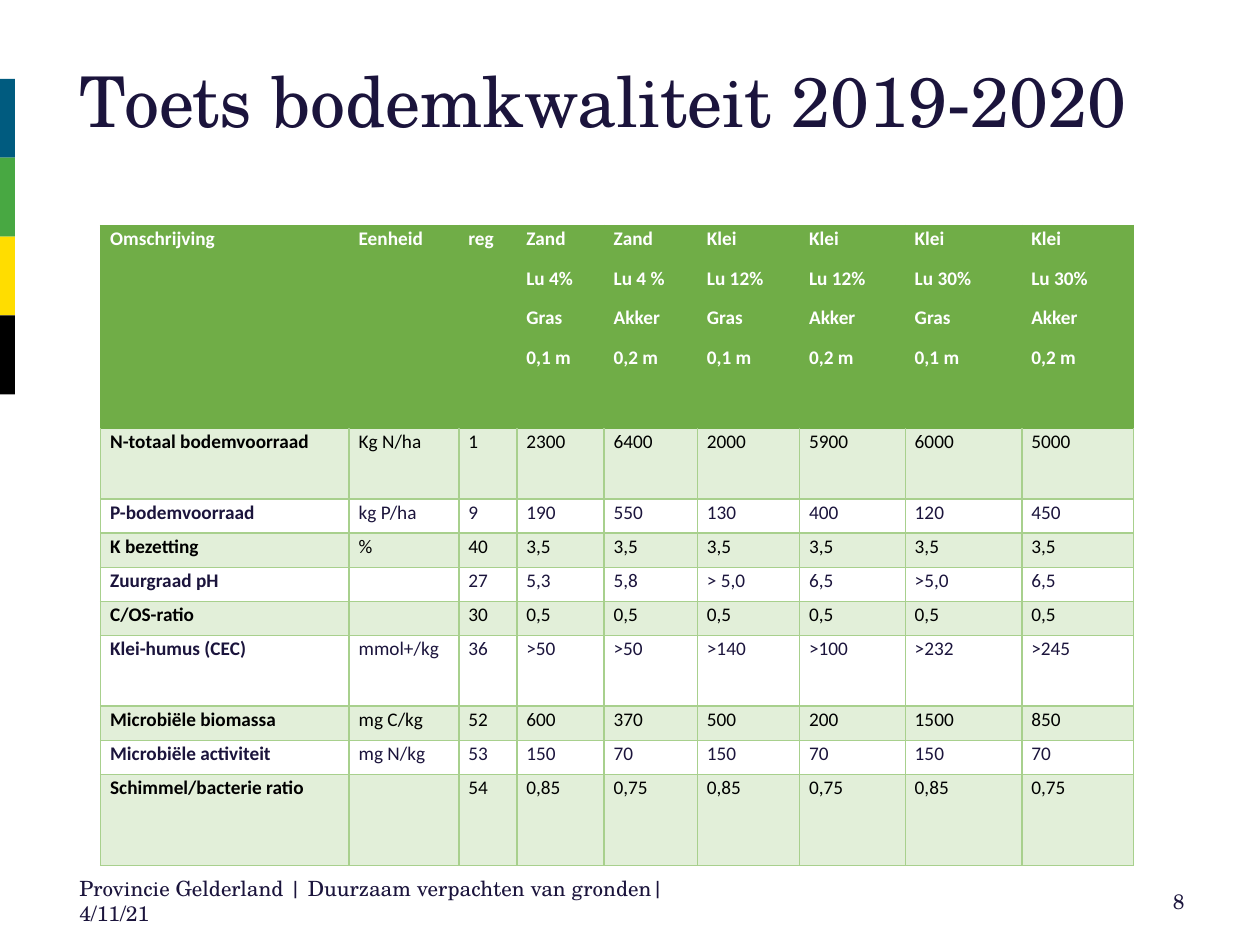
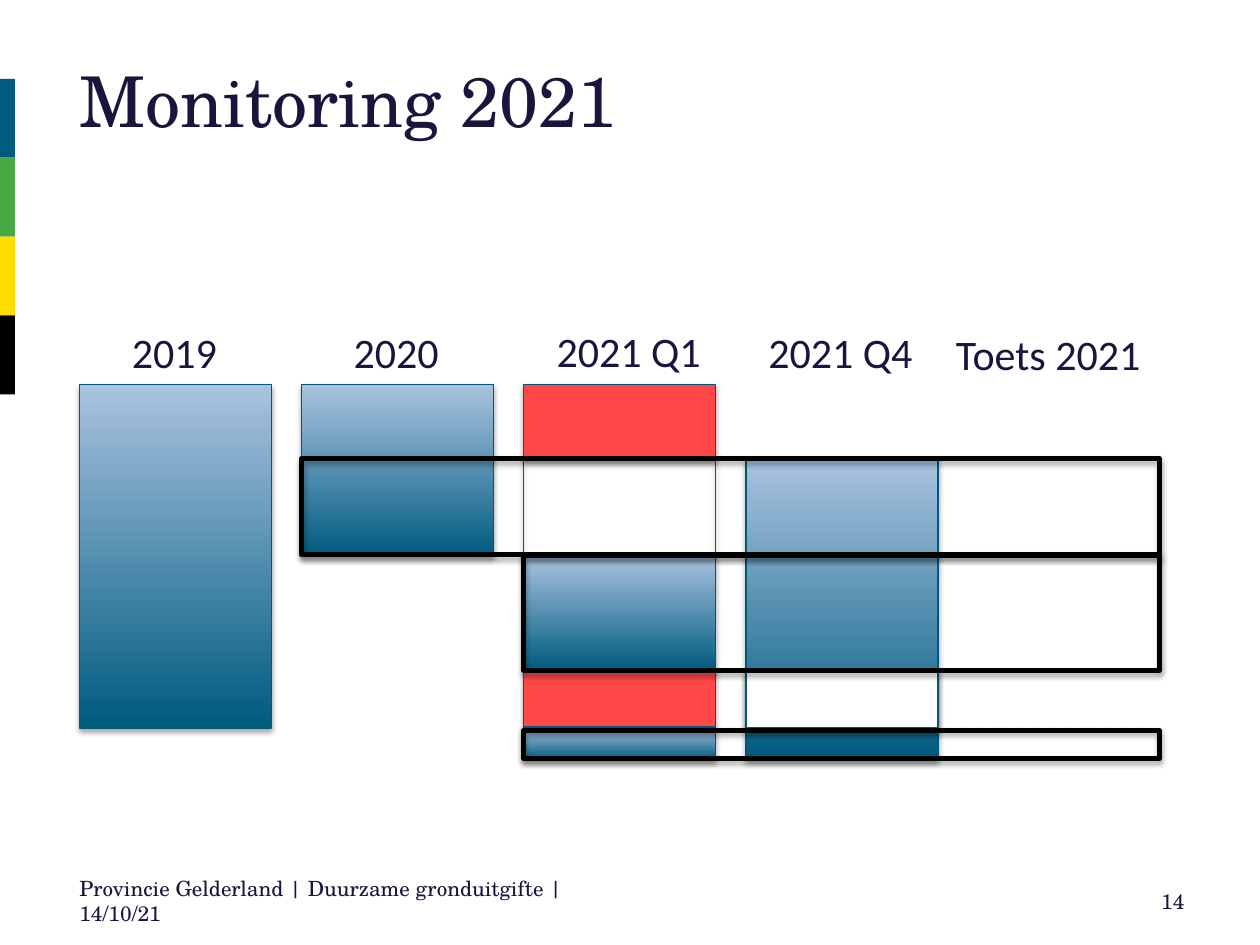
from dataclasses import dataclass

import lxml.etree
import pptx
import pptx.dml.color
import pptx.enum.shapes
import pptx.enum.text
import pptx.oxml.ns
import pptx.util

Cm = pptx.util.Cm
Pt = pptx.util.Pt
Align = pptx.enum.text.PP_ALIGN
Anchor = pptx.enum.text.MSO_ANCHOR


@dataclass(frozen=True)
class Theme:
    ink: str = "1B143C"
    black: str = "000000"
    white: str = "FFFFFF"
    bands: tuple = ("005B7F", "48A842", "FFDD00", "000000")
    header: str = "70AD47"
    stripe: str = "E2EFD9"
    grid: str = "A8D08D"
    bar_dark: str = "005B7F"
    bar_light: str = "A9C3E0"
    bar_line: str = "00597C"
    red: str = "FF4747"
    serif: str = "TeX Gyre Schola"
    sans: str = "Calibri"
    title_size: int = 40
    label_size: int = 24
    footer_size: int = 12
    table_size: int = 11


THEME = Theme()

SOIL = {
    "title": "Toets bodemkwaliteit 2019-2020",
    "footer": "Provincie Gelderland | Duurzaam verpachten van gronden| 4/11/21",
    "footer_width": 12.0,
    "number": "8",
}
MONITORING = {
    "title": "Monitoring 2021",
    "footer": "Provincie Gelderland | Duurzame gronduitgifte | 14/10/21",
    "footer_width": 9.83,
    "number": "14",
}

SOIL_ROWS = [
    ["Omschrijving", "Eenheid", "reg",
     "Zand\nLu 4%\nGras\n0,1 m", "Zand\nLu 4 %\nAkker\n0,2 m",
     "Klei\nLu 12%\nGras\n0,1 m", "Klei\nLu 12%\nAkker\n0,2 m",
     "Klei\nLu 30%\nGras\n0,1 m", "Klei\nLu 30%\nAkker\n0,2 m"],
    ["N-totaal bodemvoorraad", "Kg N/ha", "1", "2300", "6400", "2000", "5900", "6000", "5000"],
    ["P-bodemvoorraad", "kg P/ha", "9", "190", "550", "130", "400", "120", "450"],
    ["K bezetting", "%", "40", "3,5", "3,5", "3,5", "3,5", "3,5", "3,5"],
    ["Zuurgraad pH", "", "27", "5,3", "5,8", "> 5,0", "6,5", ">5,0", "6,5"],
    ["C/OS-ratio", "", "30", "0,5", "0,5", "0,5", "0,5", "0,5", "0,5"],
    ["Klei-humus (CEC)", "mmol+/kg", "36", ">50", ">50", ">140", ">100", ">232", ">245"],
    ["Microbiële biomassa", "mg C/kg", "52", "600", "370", "500", "200", "1500", "850"],
    ["Microbiële activiteit", "mg N/kg", "53", "150", "70", "150", "70", "150", "70"],
    ["Schimmel/bacterie ratio", "", "54", "0,85", "0,75", "0,85", "0,75", "0,85", "0,75"],
]
COLUMN_WIDTHS = [5.01, 2.21, 1.17, 1.76, 1.88, 2.06, 2.13, 2.35, 2.25]
ROW_HEIGHTS = [4.09, 1.42, 0.69, 0.69, 0.69, 0.69, 1.42, 0.69, 0.69, 1.83]

PERIOD_LABELS = [
    ("2019", 2.41, 6.45, 2.24),
    ("2020", 6.88, 6.45, 2.24),
    ("2021 Q1", 10.97, 6.43, 3.43),
    ("2021 Q4", 15.24, 6.45, 3.43),
    ("Toets 2021", 19.02, 6.5, 4.27),
]
BAR_LEFT, BAR_PITCH, BAR_WIDTH = 1.6, 4.48, 3.87
PERIOD_BARS = [
    (0, 7.75, 14.68, "gradient"),
    (1, 7.75, 11.22, "gradient"),
    (2, 9.25, 11.2, None),
    (2, 11.2, 13.52, "gradient"),
    (2, 14.66, 15.32, "gradient"),
    (3, 9.25, 15.32, "gradient"),
    (2, 7.75, 9.25, THEME.red),
    (2, 13.54, 14.66, THEME.red),
    (3, 13.56, 14.68, THEME.white),
]
FRAME_RIGHT = 23.37
TEST_FRAMES = [(1, 9.25, 11.18), (2, 11.2, 13.52), (2, 14.73, 15.29)]


def color(value):
    return pptx.dml.color.RGBColor.from_string(value)


def add_element(parent, tag, **attributes):
    return lxml.etree.SubElement(parent, pptx.oxml.ns.qn(tag), **attributes)


def style_font(paragraph, name, size, ink=THEME.ink, bold=False):
    font = paragraph.font
    font.name, font.size, font.bold = name, Pt(size), bold
    font.color.rgb = color(ink)


def add_label(slide, text, left, top, width, height, name, size, wrap=True):
    label = slide.shapes.add_textbox(Cm(left), Cm(top), Cm(width), Cm(height))
    frame = label.text_frame
    frame.word_wrap = wrap
    frame.text = text
    style_font(frame.paragraphs[0], name, size)
    return frame


def add_rectangle(slide, left, top, width, height, fill, line=None, line_width=0.75):
    rectangle = slide.shapes.add_shape(
        pptx.enum.shapes.MSO_SHAPE.RECTANGLE, Cm(left), Cm(top), Cm(width), Cm(height))
    rectangle.shadow.inherit = False
    if fill == "gradient":
        rectangle.fill.gradient()
        rectangle.fill.gradient_angle = 90
        for stop, shade in zip(rectangle.fill.gradient_stops, (THEME.bar_dark, THEME.bar_light)):
            stop.color.rgb = color(shade)
    elif fill:
        rectangle.fill.solid()
        rectangle.fill.fore_color.rgb = color(fill)
    else:
        rectangle.fill.background()
    if line:
        rectangle.line.color.rgb = color(line)
        rectangle.line.width = Pt(line_width)
    else:
        rectangle.line.fill.background()
    return rectangle


def add_shadow(shape):
    effects = shape._element.spPr.find(pptx.oxml.ns.qn("a:effectLst"))
    shadow = add_element(effects, "a:outerShdw", blurRad="40000", dist="23000",
                         dir="5400000", rotWithShape="0")
    shade = add_element(shadow, "a:srgbClr", val=THEME.black)
    add_element(shade, "a:alpha", val="35000")


def add_base_slide(presentation, content):
    slide = presentation.slides.add_slide(presentation.slide_layouts.get_by_name("Title Only"))
    for index, band in enumerate(THEME.bands):
        add_rectangle(slide, 0, 1.59 * (index + 1), 0.3, 1.59, band)

    title = slide.shapes.title
    title.left, title.top, title.width, title.height = Cm(1.6), Cm(1.37), Cm(22.25), Cm(3.18)
    frame = title.text_frame
    frame.text = content["title"]
    frame.auto_size = pptx.enum.text.MSO_AUTO_SIZE.NONE
    frame.vertical_anchor = Anchor.TOP
    frame.margin_left = frame.margin_right = frame.margin_top = frame.margin_bottom = 0
    paragraph = frame.paragraphs[0]
    paragraph.alignment = Align.LEFT
    paragraph.line_spacing = Pt(42)
    style_font(paragraph, THEME.serif, THEME.title_size)

    footer = add_label(slide, content["footer"], 1.6, 17.65, content["footer_width"], 1.02,
                       THEME.serif, THEME.footer_size)
    footer.margin_left = footer.margin_right = 0
    number = add_label(slide, content["number"], 18.21, 17.65, 5.92, 1.02,
                       THEME.serif, THEME.footer_size)
    number.paragraphs[0].alignment = Align.RIGHT
    footer.vertical_anchor = number.vertical_anchor = Anchor.MIDDLE
    return slide


def set_borders(cell, row):
    properties = cell._tc.get_or_add_tcPr()
    for side in ("L", "R", "T", "B"):
        green = row == 0 or (row == 1 and side == "T")
        line = add_element(properties, f"a:ln{side}", w=str(Pt(1)))
        fill = add_element(line, "a:solidFill")
        add_element(fill, "a:srgbClr", val=THEME.header if green else THEME.grid)


def fill_cell(cell, text, row, column):
    set_borders(cell, row)
    if row == 0:
        background, ink = THEME.header, THEME.white
    elif row % 2:
        background, ink = THEME.stripe, THEME.black
    else:
        background, ink = None, THEME.ink
    if background:
        cell.fill.solid()
        cell.fill.fore_color.rgb = color(background)
    else:
        cell.fill.background()
    cell.margin_left = cell.margin_right = Cm(0.19)
    cell.margin_top = cell.margin_bottom = 0
    cell.text = text
    for paragraph in cell.text_frame.paragraphs:
        paragraph.line_spacing = 1.07
        paragraph.space_after = Pt(8)
        style_font(paragraph, THEME.sans, THEME.table_size, ink, row == 0 or column == 0)
        if not text:
            add_element(paragraph._p, "a:endParaRPr", sz=str(THEME.table_size * 100))


def build_soil_slide(presentation):
    slide = add_base_slide(presentation, SOIL)
    table = slide.shapes.add_table(
        len(ROW_HEIGHTS), len(COLUMN_WIDTHS), Cm(2.03), Cm(4.55),
        Cm(sum(COLUMN_WIDTHS)), Cm(sum(ROW_HEIGHTS))).table
    table.first_row = table.horz_banding = False
    for column, width in zip(table.columns, COLUMN_WIDTHS):
        column.width = Cm(width)
    for row, height in zip(table.rows, ROW_HEIGHTS):
        row.height = Cm(height)
    for row, texts in enumerate(SOIL_ROWS):
        for column, text in enumerate(texts):
            fill_cell(table.cell(row, column), text, row, column)


def build_monitoring_slide(presentation):
    slide = add_base_slide(presentation, MONITORING)
    for text, left, top, width in PERIOD_LABELS:
        add_label(slide, text, left, top, width, 1.28, THEME.sans, THEME.label_size, wrap=False)
    for column, top, bottom, fill in PERIOD_BARS:
        left = BAR_LEFT + column * BAR_PITCH
        add_shadow(add_rectangle(slide, left, top, BAR_WIDTH, bottom - top, fill, THEME.bar_line))
    for column, top, bottom in TEST_FRAMES:
        left = BAR_LEFT + column * BAR_PITCH
        add_shadow(add_rectangle(slide, left, top, FRAME_RIGHT - left, bottom - top,
                                 None, THEME.black, 3))


def main():
    presentation = pptx.Presentation()
    presentation.slide_width, presentation.slide_height = Cm(25.4), Cm(19.05)
    build_soil_slide(presentation)
    build_monitoring_slide(presentation)
    presentation.save("out.pptx")


if __name__ == "__main__":
    main()
